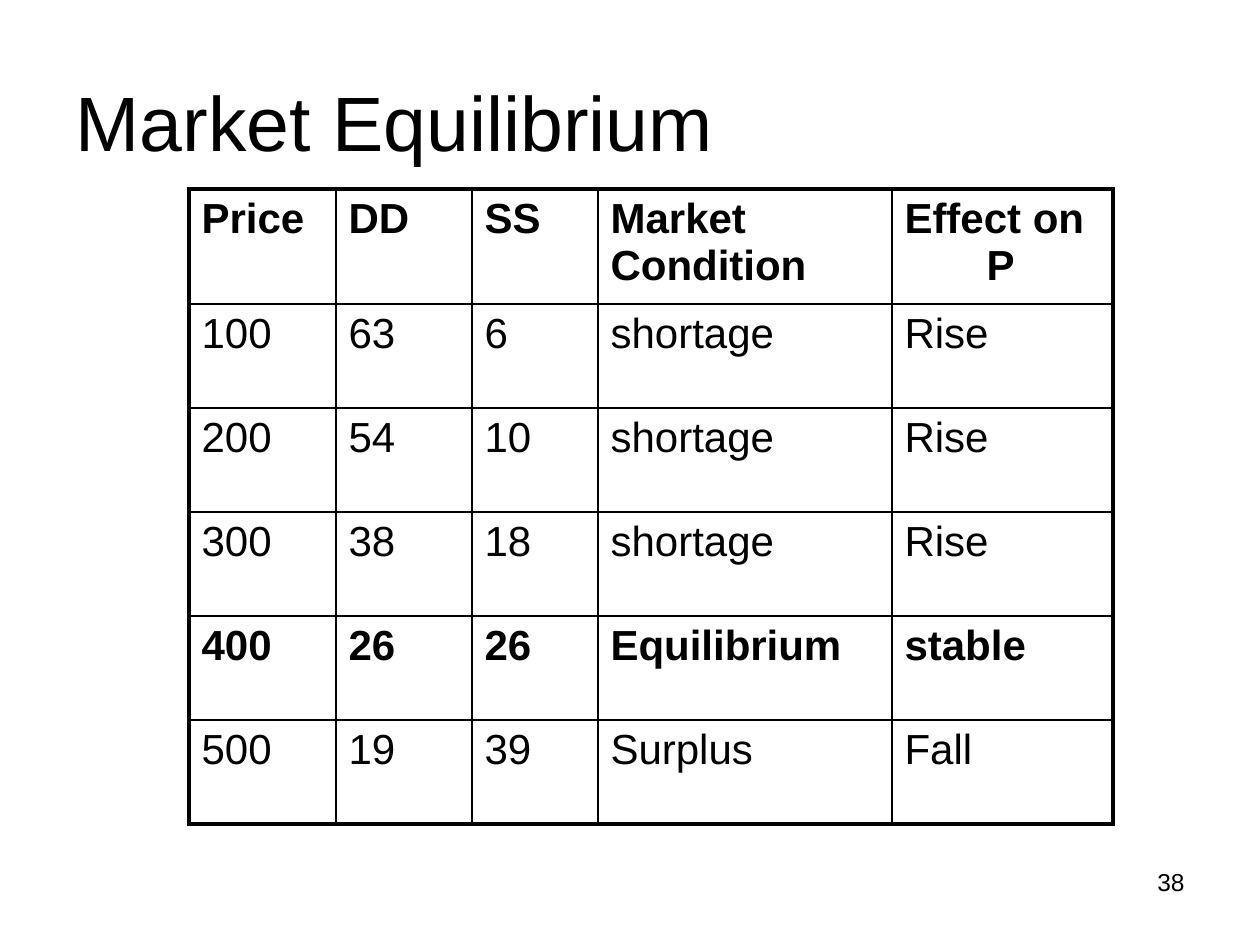
"""Build the market equilibrium slide with its price table."""
import dataclasses
import typing

import pptx
import pptx.dml.color
import pptx.enum.text
import pptx.oxml
import pptx.oxml.ns
import pptx.util

ALIGN = pptx.enum.text.PP_ALIGN
ANCHOR = pptx.enum.text.MSO_ANCHOR
SCALE = 914400 / 126


@dataclasses.dataclass(frozen=True)
class Theme:
    font: str = "Arial"
    ink: str = "000000"
    title: int = 44
    body: int = 24
    note: int = 14
    thin: float = 1
    thick: float = 2.25


class Box(typing.NamedTuple):
    left: int
    top: int
    width: int
    height: int


class Row(typing.NamedTuple):
    cells: tuple[str, ...]
    height: int = 104
    bold: bool = False


THEME = Theme()
TITLE = Box(63, 42, 1134, 158)
GRID = Box(189, 189, 924, 674)
NUMBER = Box(903, 861, 294, 66)
COLS = (147, 136, 126, 294, 221)
ROWS = (
    Row(("Price", "DD", "SS", "Market Condition", "Effect on P"), 115, True),
    Row(("100", "63", "6", "shortage", "Rise")),
    Row(("200", "54", "10", "shortage", "Rise")),
    Row(("300", "38", "18", "shortage", "Rise")),
    Row(("400", "26", "26", "Equilibrium", "stable"), bold=True),
    Row(("500", "19", "39", "Surplus", "Fall")),
)
HANG = {"Effect on P": 82}


def px(count: int) -> int:
    return pptx.util.Emu(round(count * SCALE))


def place(shape, box: Box) -> None:
    shape.left, shape.top, shape.width, shape.height = map(px, box)


def write(frame, text: str, *, size: int, bold: bool = False,
          align=ALIGN.LEFT, anchor=None, lead: int = 0, hang: int = 0) -> None:
    frame.word_wrap = True
    if anchor is not None:
        frame.vertical_anchor = anchor
    para = frame.paragraphs[0]
    para.alignment = align
    props = para._p.get_or_add_pPr()
    if lead:
        props.append(pptx.oxml.parse_xml(
            f'<a:spcBef {pptx.oxml.ns.nsdecls("a")}>'
            f'<a:spcPct val="{lead * 1000}"/></a:spcBef>'))
    if hang:
        props.set("marL", str(px(hang)))
        props.set("indent", str(-px(hang)))
    run = para.add_run()
    run.text = text
    run.font.name = THEME.font
    run.font.size = pptx.util.Pt(size)
    run.font.bold = bold
    run.font.color.rgb = pptx.dml.color.RGBColor.from_string(THEME.ink)


def edge(cell, side: str, outer: bool) -> None:
    width = pptx.util.Pt(THEME.thick if outer else THEME.thin)
    cell._tc.get_or_add_tcPr().append(pptx.oxml.parse_xml(
        f'<a:ln{side} {pptx.oxml.ns.nsdecls("a")} w="{width}"><a:solidFill>'
        f'<a:srgbClr val="{THEME.ink}"/></a:solidFill></a:ln{side}>'))


def grid(slide, box: Box, cols: tuple[int, ...], rows: tuple[Row, ...]) -> None:
    frame = slide.shapes.add_table(len(rows), len(cols), *map(px, box))
    table = frame.table
    table.first_row = table.horz_banding = False
    for col, width in zip(table.columns, cols):
        col.width = px(width)
    for y, row in enumerate(rows):
        table.rows[y].height = px(row.height)
        for x, text in enumerate(row.cells):
            cell = table.cell(y, x)
            write(cell.text_frame, text, size=THEME.body, bold=row.bold,
                  lead=20, hang=HANG.get(text, 0))
            edge(cell, "L", x == 0)
            edge(cell, "R", x == len(cols) - 1)
            edge(cell, "T", y == 0)
            edge(cell, "B", y == len(rows) - 1)
            cell.fill.background()
    place(frame, box)


def main() -> None:
    deck = pptx.Presentation()
    deck.slide_width, deck.slide_height = px(1260), px(945)
    slide = deck.slides.add_slide(deck.slide_layouts[5])
    title = slide.shapes.title
    place(title, TITLE)
    write(title.text_frame, "Market Equilibrium", size=THEME.title,
          anchor=ANCHOR.MIDDLE)
    number = slide.shapes.add_textbox(*map(px, NUMBER))
    write(number.text_frame, "38", size=THEME.note, align=ALIGN.RIGHT)
    grid(slide, GRID, COLS, ROWS)
    deck.save("out.pptx")


if __name__ == "__main__":
    main()
